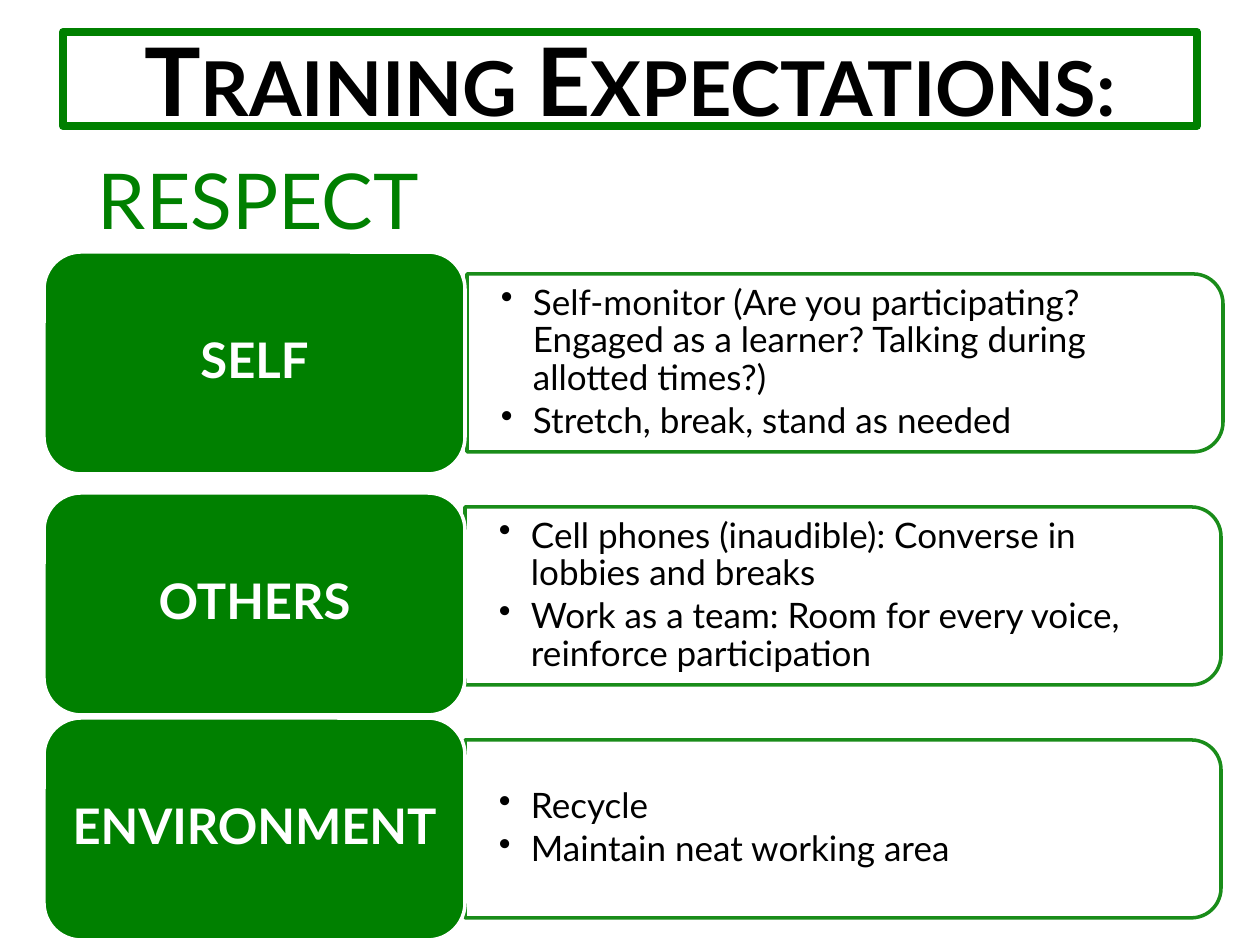
"""Build the training expectations slide about respect."""
import lxml.etree
import pptx
import pptx.dml.color
import pptx.enum.shapes
import pptx.enum.text
import pptx.oxml.ns
import pptx.util

PX = 914400 / 126
FONT = "Lato"
COLORS = {"green": "008000", "white": "FFFFFF", "black": "000000"}
SHAPES = pptx.enum.shapes.MSO_SHAPE
ALIGN = pptx.enum.text.PP_ALIGN
qn = pptx.oxml.ns.qn


def px(*lengths):
    return [pptx.util.Emu(round(length * PX)) for length in lengths]


def write(frame, texts, size, color, insets, align=ALIGN.CENTER, bold=False,
          spacing=None, after=0, bullet=False, small_caps=False):
    frame.margin_left = frame.margin_right = px(insets[0])[0]
    frame.margin_top = frame.margin_bottom = px(insets[1])[0]
    for index, text in enumerate(texts):
        paragraph = frame.add_paragraph() if index else frame.paragraphs[0]
        run = paragraph.add_run()
        run.text = text
        paragraph.alignment = align
        paragraph.line_spacing = spacing
        paragraph.space_after = pptx.util.Pt(after)
        if bullet:
            properties = paragraph._p.get_or_add_pPr()
            indent = px(32)[0]
            properties.set("marL", str(indent))
            properties.set("indent", str(-indent))
            lxml.etree.SubElement(properties, qn("a:buChar")).set("char", "•")
        if small_caps:
            run._r.get_or_add_rPr().set("cap", "small")
        paragraph.font.name = FONT
        paragraph.font.size = pptx.util.Pt(size)
        paragraph.font.bold = bold
        paragraph.font.color.rgb = pptx.dml.color.RGBColor.from_string(COLORS[color])


presentation = pptx.Presentation()
presentation.slide_width, presentation.slide_height = px(1260, 945)
slide = presentation.slides.add_slide(presentation.slide_layouts[6])
green = pptx.dml.color.RGBColor.from_string(COLORS["green"])
white = pptx.dml.color.RGBColor.from_string(COLORS["white"])

sections = [
    ("SELF", 845, 252, [
        "Self-monitor (Are you participating? Engaged as a learner? "
        "Talking during allotted times?)",
        "Stretch, break, stand as needed"]),
    ("OTHERS", 843, 493, [
        "Cell phones (inaudible): Converse in lobbies and breaks",
        "Work as a team: Room for every voice, reinforce participation"]),
    ("ENVIRONMENT", 843, 718, ["Recycle", "Maintain neat working area"]),
]
panel_width, panel_height = 756, 178
for row, (label, center_x, label_top, points) in enumerate(sections):
    center_y = 363 + 233 * row
    panel = slide.shapes.add_shape(
        SHAPES.ROUND_2_SAME_RECTANGLE,
        *px(center_x - panel_height / 2, center_y - panel_width / 2,
            panel_height, panel_width))
    panel.rotation = 90
    panel.shadow.inherit = False
    panel.fill.background()
    panel.line.color.rgb = green
    panel.line.width = pptx.util.Pt(2)
    line_color = panel.line._ln.find(".//" + qn("a:srgbClr"))
    lxml.etree.SubElement(line_color, qn("a:alpha")).set("val", "90000")

    body = slide.shapes.add_textbox(
        *px(center_x - panel_width / 2, center_y - 80, 747, 160))
    body.text_frame.word_wrap = True
    body.text_frame.vertical_anchor = pptx.enum.text.MSO_ANCHOR.MIDDLE
    write(body.text_frame, points, 20, "black", (34, 18), align=ALIGN.LEFT,
          spacing=0.9, after=3, bullet=True)

    tab = slide.shapes.add_shape(SHAPES.ROUNDED_RECTANGLE, *px(44, label_top, 421, 222))
    tab.shadow.inherit = False
    tab.fill.solid()
    tab.fill.fore_color.rgb = green
    tab.line.color.rgb = white
    tab.line.width = pptx.util.Pt(2)
    tab.text_frame.word_wrap = True
    tab.text_frame.vertical_anchor = pptx.enum.text.MSO_ANCHOR.MIDDLE
    write(tab.text_frame, [label], 28, "white", (15, 8), bold=True, spacing=0.9)

title = slide.shapes.add_shape(SHAPES.RECTANGLE, *px(63, 32, 1134, 94))
title.shadow.inherit = False
title.fill.background()
title.line.color.rgb = green
title.line.width = pptx.util.Pt(4.5)
title.text_frame.word_wrap = True
title.text_frame.vertical_anchor = pptx.enum.text.MSO_ANCHOR.MIDDLE
write(title.text_frame, ["Training Expectations:"], 54, "black", (13, 6),
      bold=True, small_caps=True)

heading = slide.shapes.add_textbox(*px(63, 147, 391, 106))
heading.text_frame.word_wrap = False
heading.text_frame.auto_size = pptx.enum.text.MSO_AUTO_SIZE.SHAPE_TO_FIT_TEXT
write(heading.text_frame, ["RESPECT…"], 44, "green", (13, 6), small_caps=True)

presentation.save("out.pptx")
